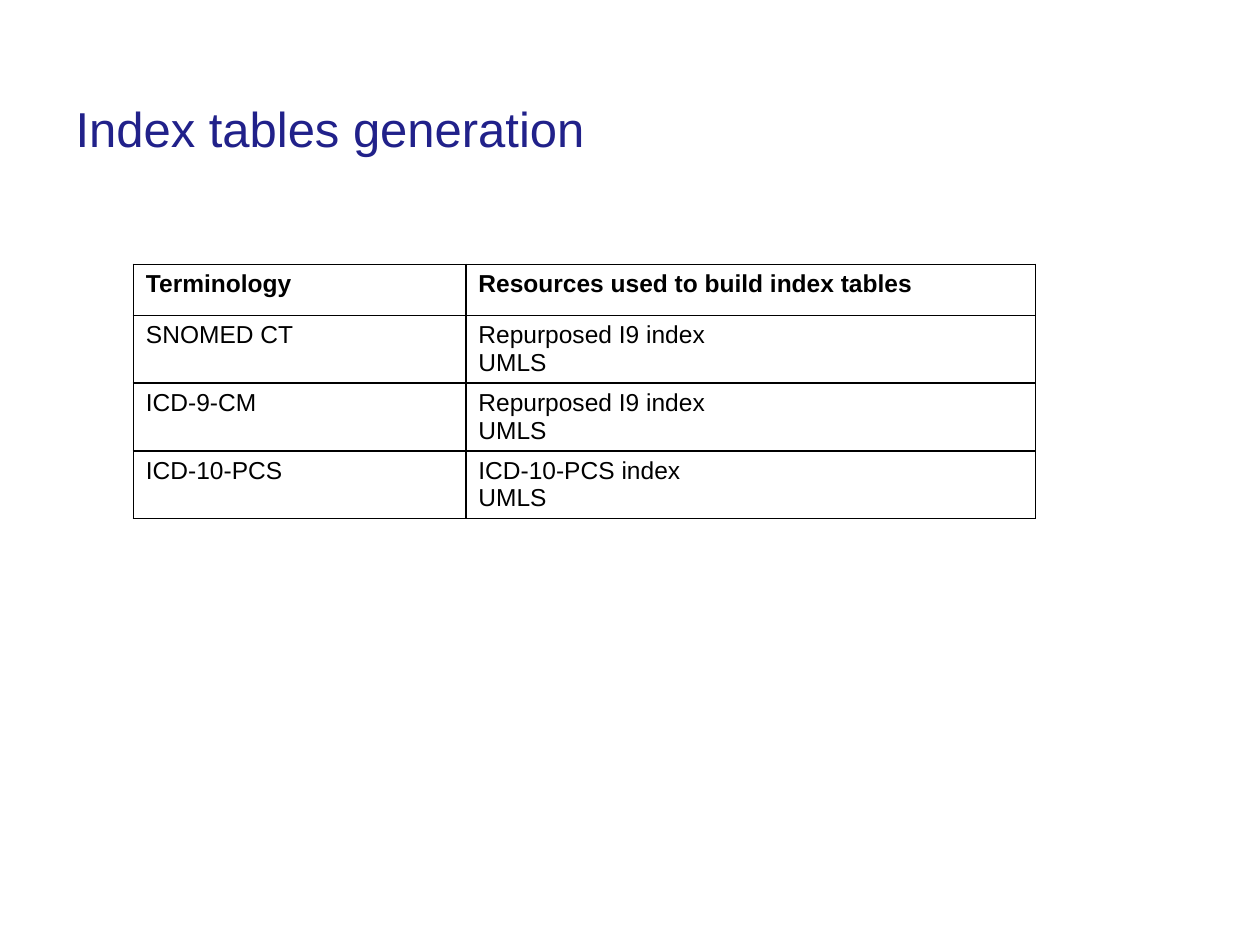
from lxml import etree
from pptx import Presentation
from pptx import util as u
from pptx.dml import color
from pptx.enum import text
from pptx.oxml import ns

FONT = "Arial"
NAVY, BLACK, WHITE = "21218A", "000000", "FFFFFF"
ROWS = [
    ("Terminology", "Resources used to build index tables"),
    ("SNOMED CT", "Repurposed I9 index\nUMLS"),
    ("ICD-9-CM", "Repurposed I9 index\nUMLS"),
    ("ICD-10-PCS", "ICD-10-PCS index\nUMLS"),
]
COLUMN_WIDTHS = (190, 325.5)
ROW_HEIGHT = 29.2


def rgb(value):
    return color.RGBColor.from_string(value)


def format_text(frame, size, value, bold=False):
    for paragraph in frame.paragraphs:
        paragraph.alignment = text.PP_ALIGN.LEFT
        for run in paragraph.runs:
            run.font.name = FONT
            run.font.size = u.Pt(size)
            run.font.bold = bold
            run.font.color.rgb = rgb(value)


def add_title(slide, wording):
    title = slide.shapes.title
    title.left, title.top = u.Pt(36), u.Pt(50.4)
    title.width, title.height = u.Pt(528.5), u.Pt(45.4)
    frame = title.text_frame
    frame.text = wording
    frame.word_wrap = True
    frame.auto_size = text.MSO_AUTO_SIZE.NONE
    frame.vertical_anchor = text.MSO_ANCHOR.MIDDLE
    frame.margin_left = frame.margin_right = u.Pt(7.2)
    frame.margin_top = frame.margin_bottom = u.Pt(7.2)
    format_text(frame, 28, NAVY)


def add_borders(cell, value, width):
    properties = cell._tc.get_or_add_tcPr()
    # Border lines come before the fill in the cell properties
    for position, side in enumerate(("lnL", "lnR", "lnT", "lnB")):
        line = etree.Element(ns.qn(f"a:{side}"), w=str(u.Pt(width)))
        fill = etree.SubElement(line, ns.qn("a:solidFill"))
        etree.SubElement(fill, ns.qn("a:srgbClr"), val=value)
        properties.insert(position, line)


def add_table(slide, rows, left, top):
    shape = slide.shapes.add_table(
        len(rows), len(COLUMN_WIDTHS), u.Pt(left), u.Pt(top),
        u.Pt(sum(COLUMN_WIDTHS)), u.Pt(ROW_HEIGHT * len(rows)))
    table = shape.table
    table.horz_banding = False
    for column, width in zip(table.columns, COLUMN_WIDTHS):
        column.width = u.Pt(width)
    for row_index, wordings in enumerate(rows):
        table.rows[row_index].height = u.Pt(ROW_HEIGHT)
        for column_index, wording in enumerate(wordings):
            cell = table.cell(row_index, column_index)
            cell.text_frame.text = wording
            format_text(cell.text_frame, 14, BLACK, bold=row_index == 0)
            cell.fill.solid()
            cell.fill.fore_color.rgb = rgb(WHITE)
            add_borders(cell, BLACK, 1)


def main():
    presentation = Presentation()
    presentation.slide_width, presentation.slide_height = u.Pt(720), u.Pt(540)
    # Layout with a title only
    slide = presentation.slides.add_slide(presentation.slide_layouts[5])
    add_title(slide, "Index tables generation")
    # Terminologies and their resources
    add_table(slide, ROWS, left=76.2, top=151)
    presentation.save("out.pptx")


if __name__ == "__main__":
    main()
